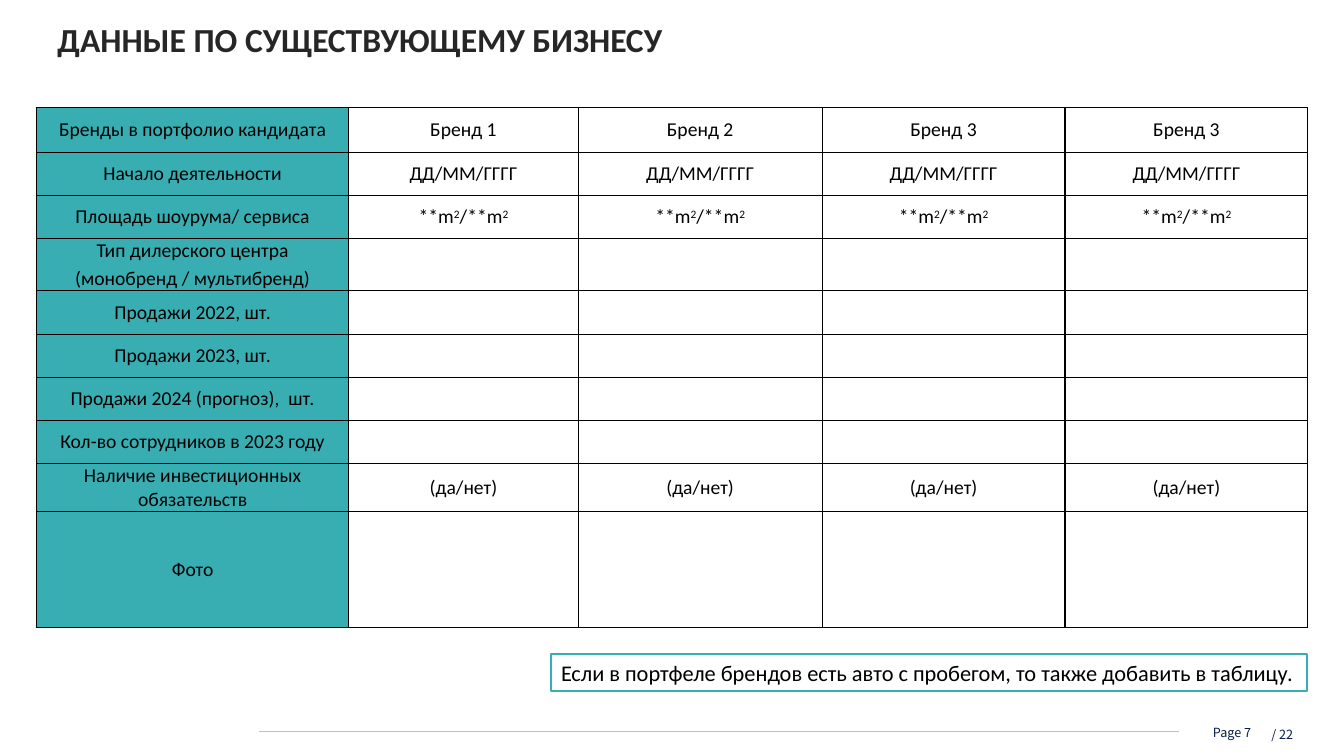
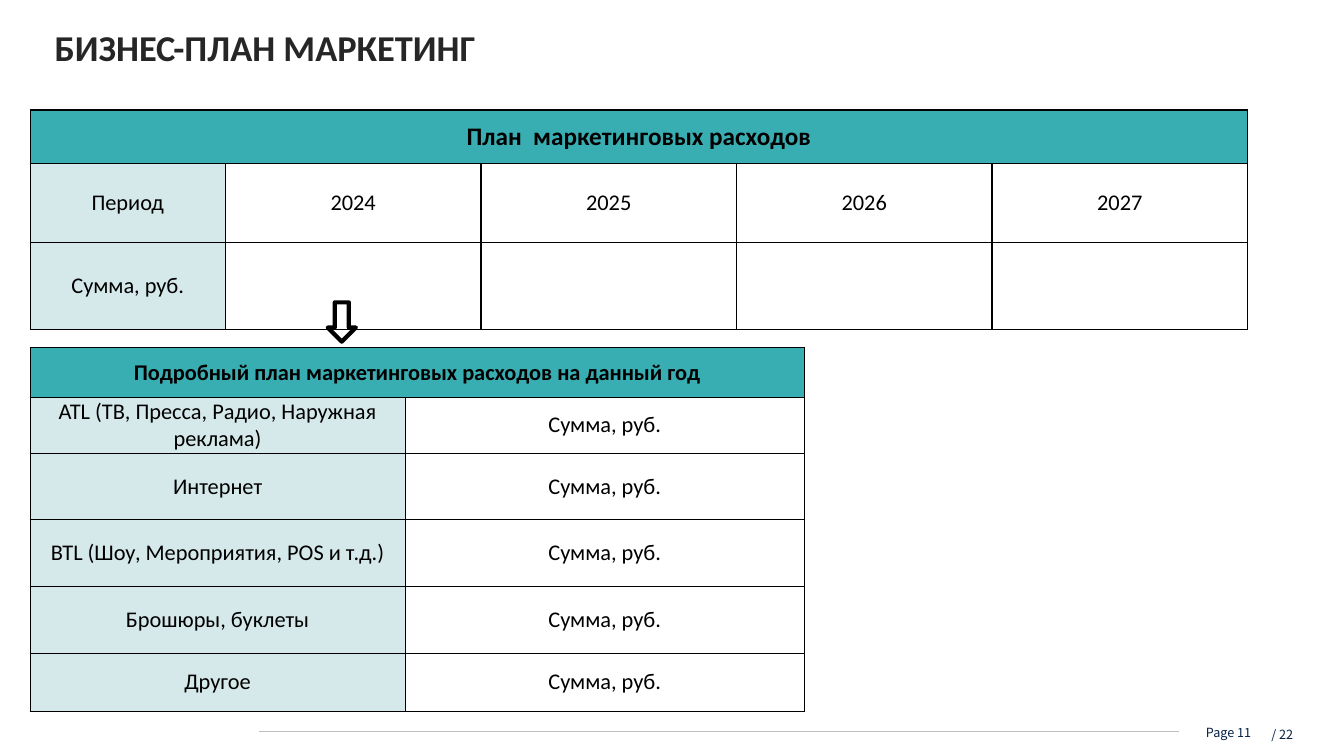
import pptx
import pptx.dml.color
import pptx.enum.shapes
import pptx.enum.text
import pptx.oxml.ns
import pptx.util
from lxml import etree

Cm = pptx.util.Cm
Pt = pptx.util.Pt
ALIGN = pptx.enum.text.PP_ALIGN
ANCHOR = pptx.enum.text.MSO_ANCHOR
SHAPE = pptx.enum.shapes.MSO_SHAPE

TEXT_FONT = "Calibri"
FOOTER_FONT = "Noto Sans CJK SC"
TEAL = "39AEB2"
PALE_TEAL = "D6E9EA"
WHITE = "FFFFFF"
BLACK = "000000"
TITLE_GREY = "262626"
RULE_GREY = "BFBFBF"
NAVY = "072146"
BRAND_COUNT = 4
PAGE_TOTAL = 22


def color(hex_string):
    return pptx.dml.color.RGBColor.from_string(hex_string)


def add_child(parent, tag, **attributes):
    return etree.SubElement(parent, pptx.oxml.ns.qn(tag), attributes)


def style_paragraph(paragraph, size, hex_color=BLACK, bold=False,
                    align=ALIGN.LEFT, font_name=TEXT_FONT):
    paragraph.alignment = align
    paragraph.font.name = font_name
    paragraph.font.size = Pt(size)
    paragraph.font.bold = bold
    paragraph.font.color.rgb = color(hex_color)


def add_text(slide, text, left, top, width, height, size, hex_color,
             margin=0.0, line_spacing=1.0, **style):
    frame = slide.shapes.add_textbox(Cm(left), Cm(top), Cm(width), Cm(height)).text_frame
    frame.word_wrap = True
    frame.margin_left = frame.margin_right = Cm(margin)
    frame.margin_top = frame.margin_bottom = Cm(margin)
    paragraph = frame.paragraphs[0]
    paragraph.text = text
    paragraph.line_spacing = line_spacing
    style_paragraph(paragraph, size, hex_color, **style)


def add_title(slide, text, left, top, size):
    add_text(slide, text, left + 0.13, top, 30.94, 1.57, size, TITLE_GREY,
             margin=0.13, line_spacing=0.9, bold=True)


def add_footer(slide, page):
    rule = slide.shapes.add_connector(
        pptx.enum.shapes.MSO_CONNECTOR.STRAIGHT,
        Cm(6.53), Cm(18.44), Cm(29.72), Cm(18.44))
    rule.line.color.rgb = color(RULE_GREY)
    rule.line.width = Pt(0.5)
    add_child(rule._element.spPr, "a:effectLst")
    style = {"align": ALIGN.RIGHT, "font_name": FOOTER_FONT}
    add_text(slide, f"Page {page}", 28.07, 18.26, 3.46, 0.84, 9, NAVY, **style)
    add_text(slide, f"/ {PAGE_TOTAL}", 30.15, 18.03, 2.54, 0.79, 9, NAVY,
             margin=0.1, line_spacing=1.5, **style)


def add_slide(presentation, page, title, left, top, size):
    slide = presentation.slides.add_slide(presentation.slide_layouts[6])
    add_footer(slide, page)
    add_title(slide, title, left, top, size)
    return slide


def set_borders(cell):
    properties = cell._tc.get_or_add_tcPr()
    for side in ("L", "R", "T", "B"):
        border = add_child(properties, f"a:ln{side}", w=str(Pt(1)))
        add_child(add_child(border, "a:solidFill"), "a:srgbClr", val=BLACK)


def fill_cell(cell, text, size, fill, bold=False):
    set_borders(cell)
    cell.fill.solid()
    cell.fill.fore_color.rgb = color(fill)
    cell.vertical_anchor = ANCHOR.MIDDLE
    cell.margin_left = cell.margin_right = 0
    cell.margin_top = cell.margin_bottom = 0
    for index, line in enumerate(text.split("\n")):
        frame = cell.text_frame
        paragraph = frame.add_paragraph() if index else frame.paragraphs[0]
        if index:
            paragraph.space_before = Pt(0.2 * size)
        style_paragraph(paragraph, size, bold=bold, align=ALIGN.CENTER)
        for position, piece in enumerate(line.split("^")):
            if piece:
                run = paragraph.add_run()
                run.text = piece
                if position % 2:
                    run.font._element.set("baseline", "30000")


def add_grid(slide, left, top, widths, heights, rows, size, label_fill,
             header=None, header_size=None):
    table = slide.shapes.add_table(
        len(heights), len(widths), Cm(left), Cm(top),
        Cm(sum(widths)), Cm(sum(heights))).table
    table.first_row = table.horz_banding = False
    for column, width in zip(table.columns, widths):
        column.width = Cm(width)
    for row, height in zip(table.rows, heights):
        row.height = Cm(height)
    first_row = 0
    if header:
        first_row = 1
        for column in range(len(widths)):
            fill_cell(table.cell(0, column), "" if column else header,
                      header_size, TEAL, bold=True)
        table.cell(0, 0).merge(table.cell(0, len(widths) - 1))
    for row_index, row in enumerate(rows, first_row):
        for column, text in enumerate(row):
            fill_cell(table.cell(row_index, column), text, size,
                      WHITE if column else label_fill)


def add_plain_shape(slide, kind, left, top, width, height, line_color, line_width):
    shape = slide.shapes.add_shape(kind, Cm(left), Cm(top), Cm(width), Cm(height))
    shape.shadow.inherit = False
    shape.fill.background()
    shape.line.color.rgb = color(line_color)
    shape.line.width = Pt(line_width)
    return shape


def add_note(slide, text, left, top, width, height):
    note = add_plain_shape(slide, SHAPE.RECTANGLE, left, top, width, height, TEAL, 1.5)
    note.fill.solid()
    note.fill.fore_color.rgb = color(WHITE)
    frame = note.text_frame
    frame.word_wrap = True
    frame.vertical_anchor = ANCHOR.MIDDLE
    paragraph = frame.paragraphs[0]
    paragraph.text = text
    style_paragraph(paragraph, 16)


def build_business_slide(presentation):
    slide = add_slide(presentation, 7, "ДАННЫЕ ПО СУЩЕСТВУЮЩЕМУ БИЗНЕСУ", 1.19, 0.46, 24)
    empty = [""] * BRAND_COUNT
    rows = [
        ["Бренды в портфолио кандидата", "Бренд 1", "Бренд 2", "Бренд 3", "Бренд 3"],
        ["Начало деятельности"] + ["ДД/ММ/ГГГГ"] * BRAND_COUNT,
        ["Площадь шоурума/ сервиса"] + ["**m^2^/**m^2^"] * BRAND_COUNT,
        ["Тип дилерского центра\n(монобренд / мультибренд)"] + empty,
        ["Продажи 2022, шт."] + empty,
        ["Продажи 2023, шт."] + empty,
        ["Продажи 2024 (прогноз),  шт."] + empty,
        ["Кол-во сотрудников в 2023 году"] + empty,
        ["Наличие инвестиционных обязательств"] + ["(да/нет)"] * BRAND_COUNT,
        ["Фото"] + empty,
    ]
    heights = [1.13, 1.09, 1.09, 1.31, 1.09, 1.09, 1.09, 1.09, 1.21, 2.91]
    add_grid(slide, 0.92, 2.71, [7.87, 5.78, 6.15, 6.12, 6.12], heights,
             rows, 14, TEAL)
    add_note(slide, "Если в портфеле брендов есть авто с пробегом, "
             "то также добавить в таблицу.", 13.89, 16.48, 19.05, 0.94)


def build_marketing_slide(presentation):
    slide = add_slide(presentation, 11, "БИЗНЕС-ПЛАН МАРКЕТИНГ", 1.12, 0.64, 26)
    amount = "Сумма, руб."
    years = [str(year) for year in range(2024, 2028)]
    add_grid(slide, 0.76, 2.77, [4.92] + [6.44] * len(years), [1.36, 1.98, 2.2],
             [["Период"] + years, [amount] + [""] * len(years)], 16, PALE_TEAL,
             "План  маркетинговых расходов", 18)
    channels = [
        "ATL (ТВ, Пресса, Радио, Наружная реклама)",
        "Интернет",
        "BTL (Шоу, Мероприятия, POS и т.д.)",
        "Брошюры, буклеты",
        "Другое",
    ]
    add_grid(slide, 0.76, 8.76, [9.45, 10.06], [1.25, 1.41, 1.68, 1.68, 1.68, 1.46],
             [[channel, amount] for channel in channels], 16, PALE_TEAL,
             "Подробный план маркетинговых расходов на данный год", 16)
    add_plain_shape(slide, SHAPE.DOWN_ARROW, 8.26, 7.62, 0.71, 0.99, BLACK, 3)


def main():
    presentation = pptx.Presentation()
    presentation.slide_width = Cm(33.87)
    presentation.slide_height = Cm(19.05)
    build_business_slide(presentation)
    build_marketing_slide(presentation)
    presentation.save("out.pptx")


if __name__ == "__main__":
    main()
